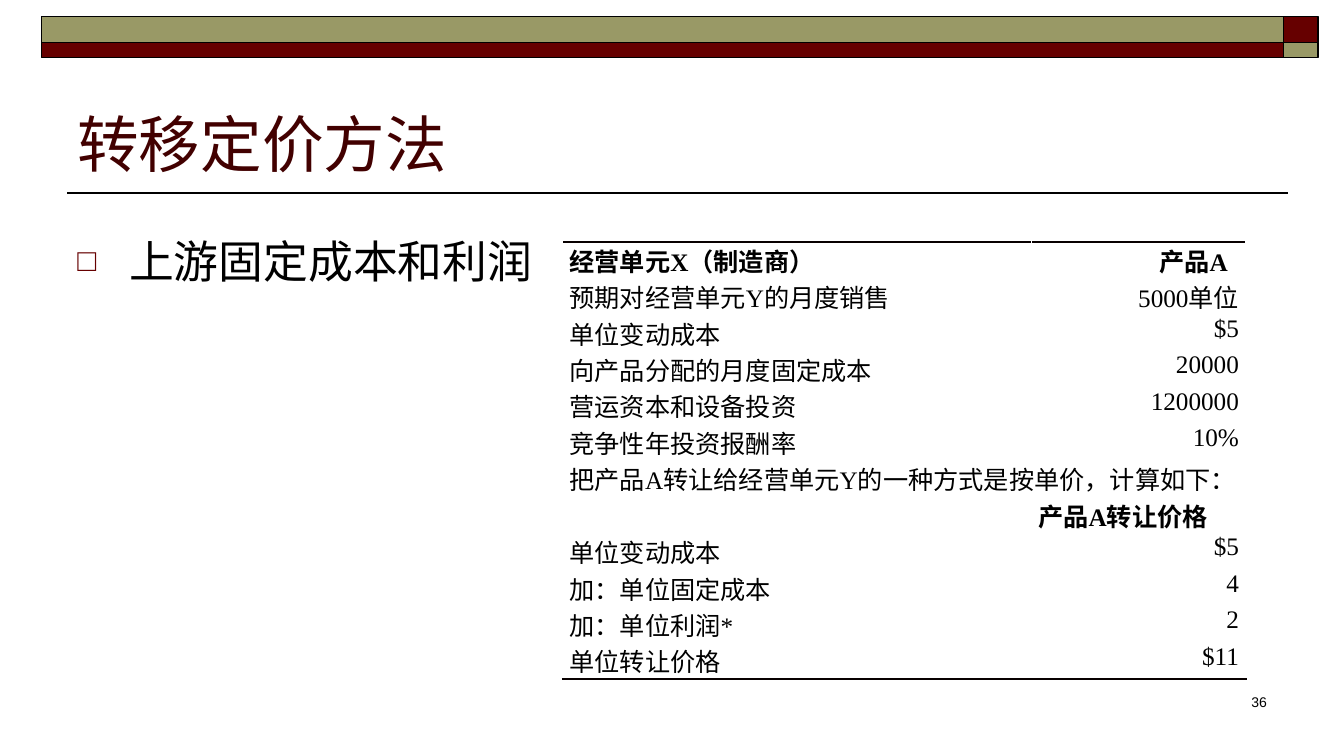
from lxml import etree
from pptx import Presentation
from pptx.dml.color import RGBColor
from pptx.enum import shapes, text
from pptx.oxml import parse_xml
from pptx.oxml import ns
from pptx.util import Pt

MAROON = RGBColor(0x66, 0x00, 0x00)
OLIVE = RGBColor(0x99, 0x99, 0x66)
TITLE_RED = RGBColor(0x42, 0x00, 0x00)
BLACK = RGBColor(0x00, 0x00, 0x00)
RULE = RGBColor(0x08, 0x00, 0x00)
SERIF = "Times New Roman"
LEFT, RIGHT = text.PP_ALIGN.LEFT, text.PP_ALIGN.RIGHT

PRICING = [
    ("经营单元X（制造商）", "产品A"),
    ("预期对经营单元Y的月度销售", "5000单位"),
    ("单位变动成本", "$5"),
    ("向产品分配的月度固定成本", "20000"),
    ("营运资本和设备投资", "1200000"),
    ("竞争性年投资报酬率", "10%"),
    ("把产品A转让给经营单元Y的一种方式是按单价，计算如下：", None),
    ("", "产品A转让价格"),
    ("单位变动成本", "$5"),
    ("加：单位固定成本", "4"),
    ("加：单位利润*", "2"),
    ("单位转让价格", "$11"),
]
HEADING, STATEMENT, SUBHEADING = 0, 6, 7


def write(frame, words, size, color=BLACK, font=SERIF, align=LEFT, bold=False):
    """Fill a text frame with one formatted paragraph and return it."""
    frame.text = words
    paragraph = frame.paragraphs[0]
    paragraph.alignment = align
    for run in paragraph.runs:
        run.font.size, run.font.name, run.font.bold = Pt(size), font, bold
        run.font.color.rgb = color
    return paragraph


def place(shape, left, top, width, height):
    """Move a shape to a box given in points."""
    shape.left, shape.top = Pt(left), Pt(top)
    shape.width, shape.height = Pt(width), Pt(height)


def add_banner(slide, left, top, width, height):
    """Draw the two-tone banner with its swapped end blocks."""
    end, upper = 24.5, 18.5
    columns = [(left, width - end), (left + width - end, end)]
    bands = [(top, upper), (top + upper, height - upper)]
    for i, (x, w) in enumerate(columns):
        for j, (y, h) in enumerate(bands):
            block = slide.shapes.add_shape(
                shapes.MSO_SHAPE.RECTANGLE, Pt(x), Pt(y), Pt(w), Pt(h))
            block.shadow.inherit = False
            block.fill.solid()
            block.fill.fore_color.rgb = OLIVE if i == j else MAROON
            block.line.color.rgb = BLACK
            block.line.width = Pt(1)


def add_heading(slide, left, top, width, height):
    """Set the title with the rule beneath it."""
    title = slide.shapes.title
    place(title, left, top, width, height)
    frame = title.text_frame
    frame.auto_size = text.MSO_AUTO_SIZE.NONE
    frame.vertical_anchor = text.MSO_ANCHOR.BOTTOM
    write(frame, "转移定价方法", 44, TITLE_RED)
    y = Pt(top + height + 6)
    rule = slide.shapes.add_connector(
        shapes.MSO_CONNECTOR.STRAIGHT, Pt(left + width + 8), y, Pt(left), y)
    rule.line.color.rgb = BLACK
    rule.line.width = Pt(1)
    etree.SubElement(rule._element.spPr, ns.qn("a:effectLst"))


def add_topic(slide, left, top, width, height):
    """Set the single bulleted topic in the body placeholder."""
    body = slide.placeholders[1]
    place(body, left, top, width, height)
    body.text_frame.auto_size = text.MSO_AUTO_SIZE.NONE
    topic = write(body.text_frame, "上游固定成本和利润", 32)
    topic.line_spacing = 1.5
    props = topic._p.get_or_add_pPr()
    props.set("marL", str(Pt(37)))
    props.set("indent", str(-Pt(37)))
    for bullet in (f'<a:buClr {ns.nsdecls("a")}><a:srgbClr val="{MAROON}"/></a:buClr>',
                   f'<a:buSzPct {ns.nsdecls("a")} val="70000"/>',
                   f'<a:buChar {ns.nsdecls("a")} char="□"/>'):
        props.append(parse_xml(bullet))


def add_border(cell, side):
    """Rule one side of a cell, lnT or lnB."""
    cell._tc.get_or_add_tcPr().insert(0, parse_xml(
        f'<a:{side} {ns.nsdecls("a")} w="{Pt(1)}"><a:solidFill>'
        f'<a:srgbClr val="{RULE}"/></a:solidFill></a:{side}>'))


def add_pricing(slide, left, top, width, height):
    """Build the transfer price table, ruled above and below."""
    last = len(PRICING) - 1
    table = slide.shapes.add_table(
        len(PRICING), 2, Pt(left), Pt(top), Pt(width), Pt(height)).table
    table.first_row = table.horz_banding = False
    amounts = 153.4
    table.columns[0].width, table.columns[1].width = Pt(width - amounts), Pt(amounts)
    table.cell(STATEMENT, 0).merge(table.cell(STATEMENT, 1))
    for r, entries in enumerate(PRICING):
        table.rows[r].height = Pt(height / len(PRICING))
        for c, words in enumerate(entries):
            cell = table.cell(r, c)
            cell.fill.background()
            cell.margin_left = cell.margin_right = Pt(5)
            cell.margin_top = cell.margin_bottom = 0
            if words:
                align = RIGHT if c and r != SUBHEADING else LEFT
                write(cell.text_frame, words, 18, align=align,
                      bold=r in (HEADING, SUBHEADING))
            if r == HEADING:
                add_border(cell, "lnT")
            if r == last:
                add_border(cell, "lnB")
    table.cell(HEADING, 1).margin_right = Pt(13)


def add_page_number(slide, left, top, width, height):
    """Write the page number at the lower right."""
    page = slide.shapes.add_textbox(Pt(left), Pt(top), Pt(width), Pt(height))
    page.text_frame.word_wrap = True
    write(page.text_frame, "36", 10, font="Arial", align=RIGHT)


def main():
    """Build and save the slide."""
    deck = Presentation()
    deck.slide_width, deck.slide_height = Pt(960), Pt(540)
    slide = deck.slides.add_slide(deck.slide_layouts[1])
    add_heading(slide, 48, 42, 864, 90)
    add_banner(slide, 29.5, 12, 912, 29)
    add_topic(slide, 48, 144, 864, 334)
    add_page_number(slide, 712, 492, 200, 36)
    add_pricing(slide, 401.8, 172.8, 488.2, 312.6)
    deck.save("out.pptx")


if __name__ == "__main__":
    main()
